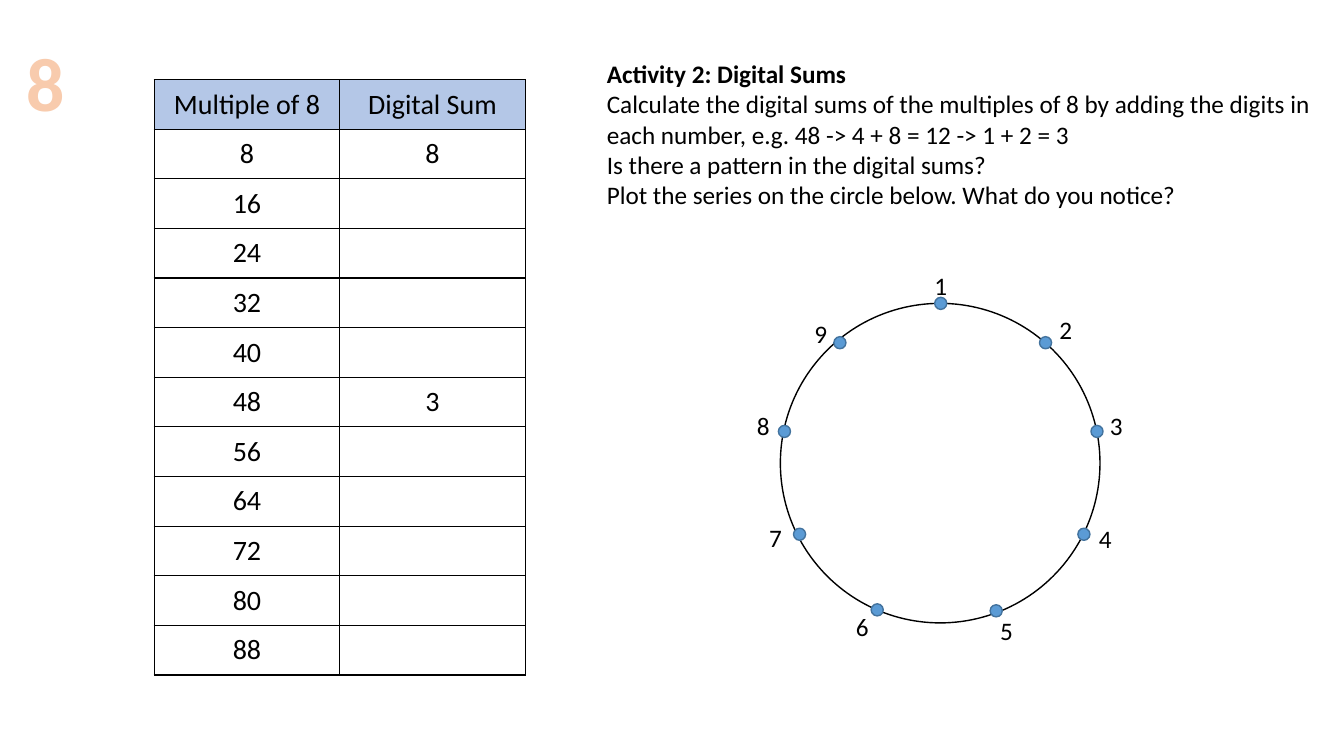
"""Build the slide on digital sums of the multiples of 8."""
import dataclasses

import lxml.etree
import pptx
import pptx.dml.color
import pptx.enum.shapes
import pptx.enum.text
import pptx.oxml.ns
import pptx.util

Inches = pptx.util.Inches
Pt = pptx.util.Pt
PP_ALIGN = pptx.enum.text.PP_ALIGN
qn = pptx.oxml.ns.qn

COLOURS = {
    "ink": "000000",
    "header": "B4C7E7",
    "dot": "5B9BD5",
    "dot_line": "43739E",
    "numeral": "F8CBAD",
    "numeral_line": "ED7D31",
}
FONT = "Calibri"
DOT_SIZE = 0.12
LABEL_SIZE = (0.33, 0.4)
KNOWN_SUMS = {8: "8", 48: "3"}
HEADERS = ("Multiple of 8", "Digital Sum")
ACTIVITY = (
    "Activity 2: Digital Sums",
    "Calculate the digital sums of the multiples of 8 by adding the digits in each number, "
    "e.g. 48 -> 4 + 8 = 12 -> 1 + 2 = 3",
    "Is there a pattern in the digital sums?",
    "Plot the series on the circle below. What do you notice?",
)


@dataclasses.dataclass(frozen=True)
class CirclePoint:
    number: int
    dot: tuple[float, float]
    label: tuple[float, float]


POINTS = (
    CirclePoint(1, (9.27, 2.95), (9.17, 2.63)),
    CirclePoint(2, (10.31, 3.34), (10.41, 3.07)),
    CirclePoint(3, (10.82, 4.22), (10.91, 4.02)),
    CirclePoint(4, (10.69, 5.24), (10.8, 5.14)),
    CirclePoint(5, (9.82, 6), (9.82, 6.06)),
    CirclePoint(6, (8.64, 5.99), (8.39, 6.02)),
    CirclePoint(7, (7.87, 5.24), (7.53, 5.13)),
    CirclePoint(8, (7.72, 4.22), (7.41, 4.02)),
    CirclePoint(9, (8.27, 3.34), (7.98, 3.11)),
)


def colour(name: str) -> pptx.dml.color.RGBColor:
    return pptx.dml.color.RGBColor.from_string(COLOURS[name])


def add_outline(parent, tag: str, width: float, name: str, index: int) -> None:
    line = lxml.etree.Element(qn(tag), w=str(Pt(width)))
    fill = lxml.etree.SubElement(line, qn("a:solidFill"))
    lxml.etree.SubElement(fill, qn("a:srgbClr"), val=COLOURS[name])
    parent.insert(index, line)


def format_paragraph(para, size: float, name: str = "ink", bold: bool = False, align=None) -> None:
    para.alignment = align
    for span in para.runs:
        span.font.name = FONT
        span.font.size = Pt(size)
        span.font.bold = bold
        span.font.color.rgb = colour(name)


def add_text(shapes, left: float, top: float, width: float, height: float, text: str, wrap: bool = False):
    box = shapes.add_textbox(Inches(left), Inches(top), Inches(width), Inches(height))
    frame = box.text_frame
    frame.text = text
    frame.word_wrap = wrap
    frame.auto_size = pptx.enum.text.MSO_AUTO_SIZE.SHAPE_TO_FIT_TEXT
    return box


def add_ellipse(shapes, left: float, top: float, size: float, line: str, fill: str | None = None) -> None:
    ellipse = shapes.add_shape(
        pptx.enum.shapes.MSO_SHAPE.OVAL, Inches(left), Inches(top), Inches(size), Inches(size)
    )
    ellipse.shadow.inherit = False
    ellipse.line.color.rgb = colour(line)
    ellipse.line.width = Pt(1)
    if fill:
        ellipse.fill.solid()
        ellipse.fill.fore_color.rgb = colour(fill)
    else:
        ellipse.fill.background()


def add_sums_table(page) -> None:
    rows = [HEADERS] + [(str(8 * n), KNOWN_SUMS.get(8 * n, "")) for n in range(1, 12)]
    table = page.shapes.add_table(
        len(rows), 2, Inches(1.53), Inches(0.79), Inches(3.68), Inches(5.91)
    ).table
    for row_index, row in enumerate(rows):
        for column_index, text in enumerate(row):
            cell = table.cell(row_index, column_index)
            cell.text_frame.text = text
            cell.vertical_anchor = pptx.enum.text.MSO_ANCHOR.MIDDLE
            format_paragraph(cell.text_frame.paragraphs[0], 20, align=PP_ALIGN.CENTER)
            if row_index == 0:
                cell.fill.solid()
                cell.fill.fore_color.rgb = colour("header")
            else:
                cell.fill.background()
            properties = cell._tc.get_or_add_tcPr()
            for index, tag in enumerate(("a:lnL", "a:lnR", "a:lnT", "a:lnB")):
                add_outline(properties, tag, 1, "ink", index)


def add_activity(page) -> None:
    box = add_text(page.shapes, 5.92, 0.53, 7.22, 1.62, "\n".join(ACTIVITY), wrap=True)
    for index, para in enumerate(box.text_frame.paragraphs):
        format_paragraph(para, 18, bold=index == 0)


def add_number_circle(page) -> None:
    shapes = page.shapes.add_group_shape().shapes
    add_ellipse(shapes, 7.74, 3.01, 3.17, "ink")
    for point in POINTS:
        add_ellipse(shapes, *point.dot, DOT_SIZE, "dot_line", "dot")
        label = add_text(shapes, *point.label, *LABEL_SIZE, str(point.number))
        format_paragraph(label.text_frame.paragraphs[0], 18)


def add_numeral(page) -> None:
    box = add_text(page.shapes, 0.16, 0.31, 0.59, 1.01, "8")
    para = box.text_frame.paragraphs[0]
    format_paragraph(para, 54, "numeral", bold=True, align=PP_ALIGN.CENTER)
    add_outline(para.runs[0].font._element, "a:ln", 1.75, "numeral_line", 0)


def main() -> None:
    deck = pptx.Presentation()
    deck.slide_width = Inches(13.33)
    deck.slide_height = Inches(7.5)
    page = deck.slides.add_slide(deck.slide_layouts[6])
    add_sums_table(page)
    add_activity(page)
    add_number_circle(page)
    add_numeral(page)
    deck.save("out.pptx")


if __name__ == "__main__":
    main()
